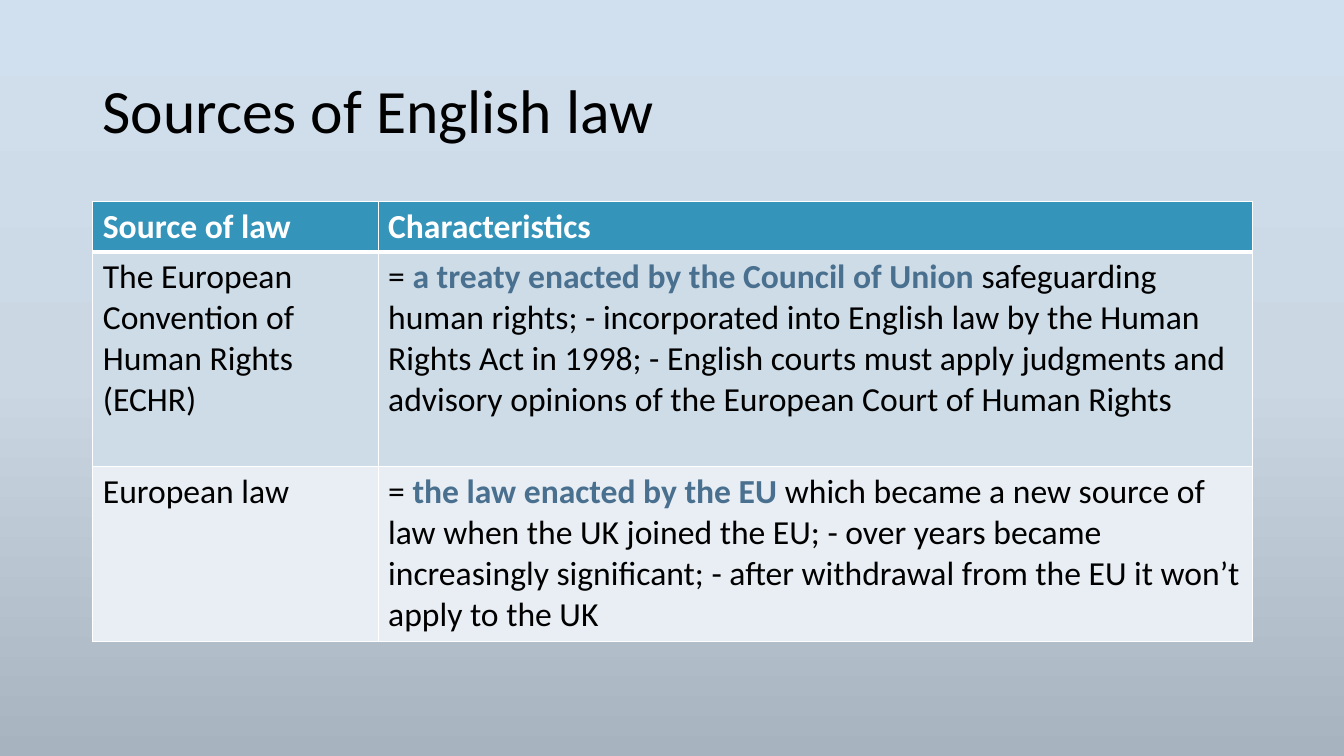
import copy
import pptx
import pptx.dml.color
import pptx.enum.text
import pptx.oxml
import pptx.oxml.ns
import pptx.util

Inches = pptx.util.Inches
Pt = pptx.util.Pt

TITLE = "Sources of English law"
ROWS = [
    [[("Source of law", "head")], [("Characteristics", "head")]],
    [
        [("The European Convention of Human Rights (ECHR)", "body")],
        [
            ("= ", "body"),
            ("a treaty enacted by the Council of Union ", "key"),
            ("safeguarding human rights; - incorporated into English law by the Human Rights Act in 1998; "
             "- English courts must apply judgments and advisory opinions of the European Court of Human Rights",
             "body"),
        ],
    ],
    [
        [("European law", "body")],
        [
            ("= ", "body"),
            ("the law enacted by the EU ", "key"),
            ("which became a new source of law when the UK joined the EU; - over years became increasingly "
             "significant; - after withdrawal from the EU it won’t apply to the UK", "body"),
        ],
    ],
]
WIDTHS = [2.83, 8.67]
HEIGHTS = [0.5, 2.13, 1.73]
LEFT, TOP = 0.92, 2

THEME = {
    "font": "Calibri",
    "title": (44, "000000", False),
    "head": (24, "FFFFFF", True),
    "body": (24, "000000", False),
    "key": (24, "4A7090", True),
    "fills": ["3494BA", "CEDCE7", "E8EEF3"],
    "rule": "FFFFFF",
    "back": [(0, "D1E0EE"), (0.5, "CBD8E4"), (1, "A7B3BE")],
}


def color(code):
    return pptx.dml.color.RGBColor.from_string(code)


def write(para, text, style):
    run = para.add_run()
    run.text = text
    size, code, bold = THEME[style]
    run.font.name = THEME["font"]
    run.font.size = Pt(size)
    run.font.bold = bold
    run.font.color.rgb = color(code)


def border(cell, head):
    props = cell._tc.get_or_add_tcPr()
    for spot, side in enumerate("LRTB"):
        width = 3 if head and side == "B" else 1
        line = pptx.oxml.parse_xml(
            f'<a:ln{side} {pptx.oxml.ns.nsdecls("a")} w="{Pt(width)}"><a:solidFill>'
            f'<a:srgbClr val="{THEME["rule"]}"/></a:solidFill></a:ln{side}>'
        )
        props.insert(spot, line)


def paint(slide):
    fill = slide.background.fill
    fill.gradient()
    fill.gradient_angle = 270
    stops = slide._element.find(".//" + pptx.oxml.ns.qn("a:gsLst"))
    stops.insert(1, copy.deepcopy(stops[0]))
    for stop, (place, code) in zip(fill.gradient_stops, THEME["back"]):
        stop.position = place
        stop.color.rgb = color(code)


def add_title(slide):
    box = slide.shapes.add_textbox(Inches(LEFT), Inches(0.4), Inches(sum(WIDTHS)), Inches(1.45))
    frame = box.text_frame
    frame.word_wrap = True
    frame.vertical_anchor = pptx.enum.text.MSO_ANCHOR.MIDDLE
    para = frame.paragraphs[0]
    para.line_spacing = 0.9
    write(para, TITLE, "title")


def add_grid(slide):
    grid = slide.shapes.add_table(
        len(ROWS), len(WIDTHS), Inches(LEFT), Inches(TOP), Inches(sum(WIDTHS)), Inches(sum(HEIGHTS))
    ).table
    for col, width in zip(grid.columns, WIDTHS):
        col.width = Inches(width)
    for r, row in enumerate(ROWS):
        grid.rows[r].height = Inches(HEIGHTS[r])
        for c, parts in enumerate(row):
            cell = grid.cell(r, c)
            cell.fill.solid()
            cell.fill.fore_color.rgb = color(THEME["fills"][r])
            border(cell, r == 0)
            for text, style in parts:
                write(cell.text_frame.paragraphs[0], text, style)


def main():
    deck = pptx.Presentation()
    deck.slide_width = Inches(13.33)
    deck.slide_height = Inches(7.5)
    slide = deck.slides.add_slide(deck.slide_layouts[6])
    paint(slide)
    add_title(slide)
    add_grid(slide)
    deck.save("out.pptx")


if __name__ == "__main__":
    main()
